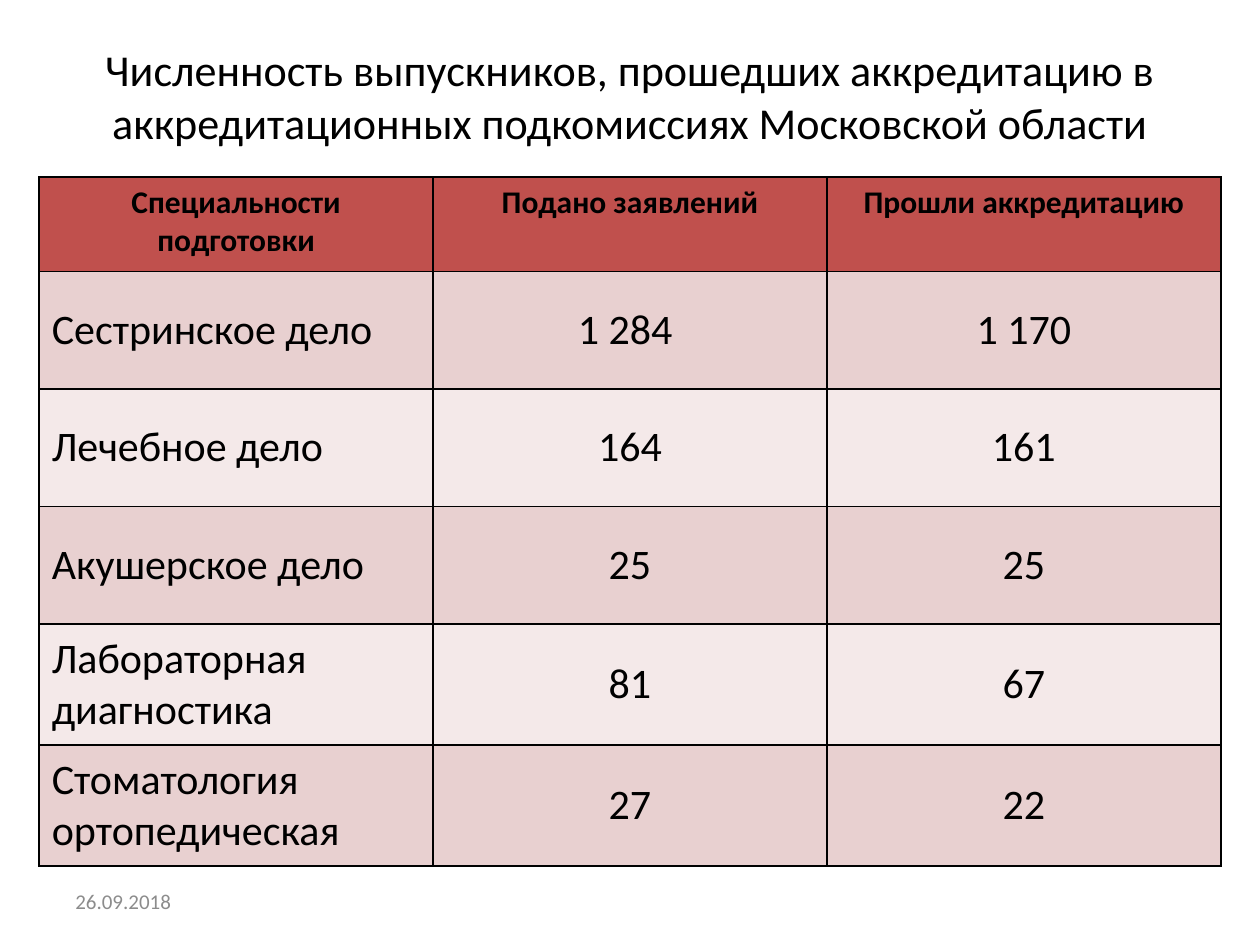
from lxml import etree
from pptx import Presentation
from pptx.dml.color import RGBColor
from pptx.enum.text import MSO_ANCHOR, PP_ALIGN
from pptx.oxml.ns import qn
from pptx.util import Cm, Pt

LEFT, CENTER = PP_ALIGN.LEFT, PP_ALIGN.CENTER
TOP, MIDDLE = MSO_ANCHOR.TOP, MSO_ANCHOR.MIDDLE

BLACK = RGBColor(0x00, 0x00, 0x00)
GREY = RGBColor(0x8C, 0x8C, 0x8C)
HEADER_RED = RGBColor(0xC0, 0x50, 0x4D)
BANDS = (RGBColor(0xE8, 0xD0, 0xD0), RGBColor(0xF4, 0xE9, 0xE9))
FONT = "Calibri"

TITLE = "Численность выпускников, прошедших аккредитацию в аккредитационных подкомиссиях Московской области"
DATE = "26.09.2018"
HEADINGS = ("Специальности подготовки", "Подано заявлений", "Прошли аккредитацию")
SPECIALTIES = (
    ("Сестринское дело", "1 284 ", "1 170"),
    ("Лечебное дело", "164", "161"),
    ("Акушерское дело", "25", "25"),
    ("Лабораторная диагностика", "81", "67"),
    ("Стоматология ортопедическая", "27", "22"),
)
ROW_HEIGHTS = (1.9, 2.37, 2.37, 2.37, 2.44, 2.44)


def write(frame, text, size, color, align, bold=False):
    """Fill a text frame with one formatted paragraph."""
    frame.text = text
    frame.word_wrap = True
    paragraph = frame.paragraphs[0]
    paragraph.alignment = align
    for run in paragraph.runs:
        run.font.name = FONT
        run.font.size = Pt(size)
        run.font.bold = bold
        run.font.color.rgb = color


def add_label(slide, box, text, size, color, align):
    """Place a vertically centred line of text in the given box."""
    frame = slide.shapes.add_textbox(*map(Cm, box)).text_frame
    write(frame, text, size, color, align)
    frame.vertical_anchor = MIDDLE


def add_borders(cell):
    """Draw a thin black line on all four sides of a cell."""
    properties = cell._tc.get_or_add_tcPr()
    for side in ("a:lnL", "a:lnR", "a:lnT", "a:lnB"):
        line = etree.SubElement(properties, qn(side), w=str(Pt(1)))
        fill = etree.SubElement(line, qn("a:solidFill"))
        etree.SubElement(fill, qn("a:srgbClr"), val=str(BLACK))


def add_accreditation_table(slide, left, top, width):
    """Build the table of applications and accreditations by specialty."""
    rows = (HEADINGS, *SPECIALTIES)
    table = slide.shapes.add_table(
        len(rows), len(HEADINGS), Cm(left), Cm(top), Cm(width), Cm(sum(ROW_HEIGHTS))
    ).table
    for column in table.columns:
        column.width = Cm(width / len(HEADINGS))
    for r, (values, height) in enumerate(zip(rows, ROW_HEIGHTS)):
        table.rows[r].height = Cm(height)
        is_header = r == 0
        for c, value in enumerate(values):
            cell = table.cell(r, c)
            add_borders(cell)
            cell.fill.solid()
            cell.fill.fore_color.rgb = HEADER_RED if is_header else BANDS[(r - 1) % 2]
            cell.vertical_anchor = TOP if is_header else MIDDLE
            align = CENTER if is_header or c else LEFT
            write(cell.text_frame, value, 18 if is_header else 24, BLACK, align, is_header)


def main():
    """Build and save the slide."""
    presentation = Presentation()
    presentation.slide_width, presentation.slide_height = Cm(25.4), Cm(19.05)
    slide = presentation.slides.add_slide(presentation.slide_layouts[6])
    add_label(slide, (1.27, 0.79, 22.86, 2.26), TITLE, 25.2, BLACK, CENTER)
    add_accreditation_table(slide, 0.79, 3.57, 23.82)
    add_label(slide, (1.27, 17.65, 5.92, 1.02), DATE, 12, GREY, LEFT)
    presentation.save("out.pptx")


if __name__ == "__main__":
    main()
